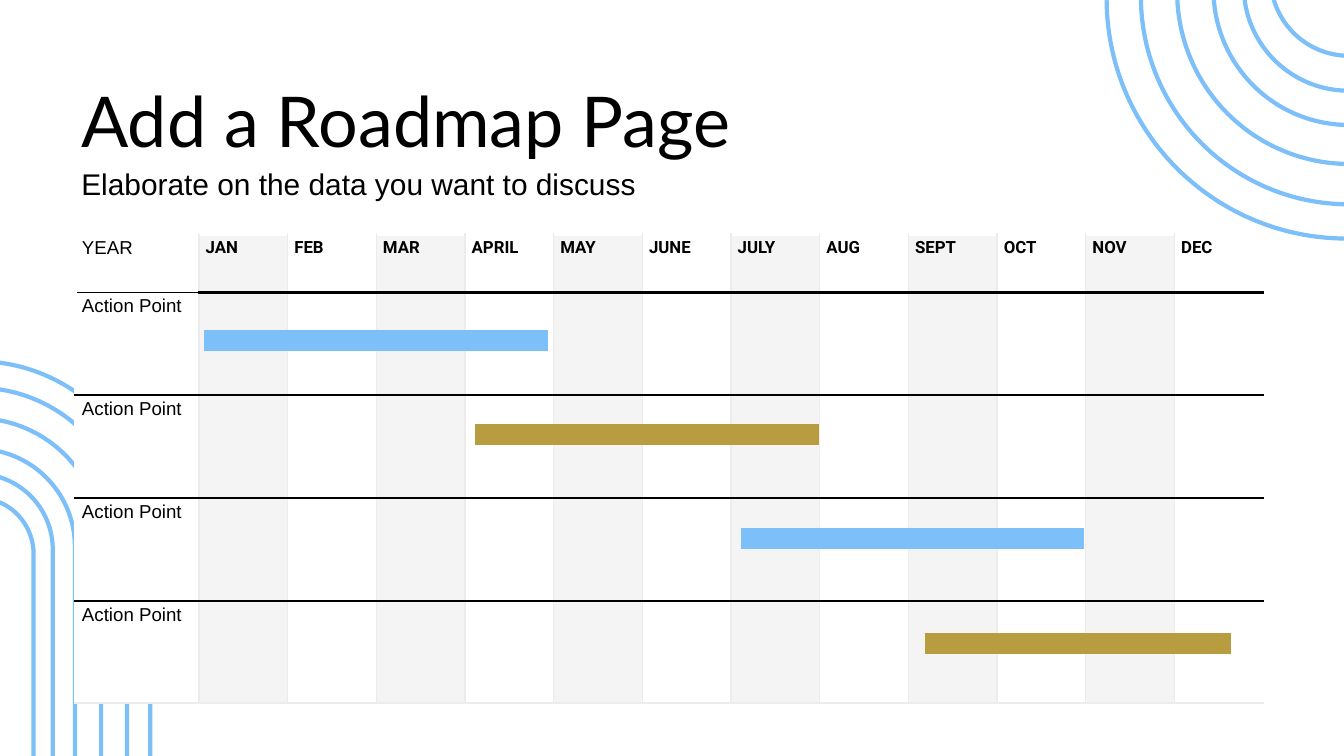
from dataclasses import dataclass

from lxml import etree
from pptx import Presentation
from pptx.dml.color import RGBColor
from pptx.enum.shapes import MSO_CONNECTOR, MSO_SHAPE
from pptx.enum.text import MSO_ANCHOR, MSO_AUTO_SIZE, PP_ALIGN
from pptx.oxml.ns import qn
from pptx.util import Inches, Pt

ARCH = MSO_SHAPE.ROUND_2_SAME_RECTANGLE
STRAIGHT = MSO_CONNECTOR.STRAIGHT
TOP = MSO_ANCHOR.TOP
LEFT = PP_ALIGN.LEFT
GROW = MSO_AUTO_SIZE.SHAPE_TO_FIT_TEXT

BLACK = RGBColor(0x00, 0x00, 0x00)
WHITE = RGBColor(0xFF, 0xFF, 0xFF)
BLUE = RGBColor(0x7D, 0xBF, 0xF8)
GOLD = RGBColor(0xB8, 0x9D, 0x40)
STRIPE = RGBColor(0xF4, 0xF4, 0xF4)
GRID = RGBColor(0xED, 0xEC, 0xED)

MONTHS = ["JAN", "FEB", "MAR", "APRIL", "MAY", "JUNE",
          "JULY", "AUG", "SEPT", "OCT", "NOV", "DEC"]
ROW_HEIGHTS = [0.86, 1.53, 1.53, 1.53, 1.52]
LABEL_WIDTH, MONTH_WIDTH = 1.84, 1.32
LAST_ROW, LAST_COLUMN = len(ROW_HEIGHTS) - 1, len(MONTHS)


@dataclass(frozen=True)
class Arch:
    left: float
    top: float
    width: float
    height: float
    rotation: float = 0


@dataclass(frozen=True)
class Bar:
    start: float
    end: float
    middle: float
    color: RGBColor


@dataclass(frozen=True)
class Border:
    color: RGBColor
    points: float


@dataclass(frozen=True)
class TextStyle:
    font: str
    size: float
    bold: bool = False


TITLE = TextStyle("Lato", 75)
SUBTITLE = TextStyle("Arial", 32)
LABEL = TextStyle("Arial", 20)
MONTH = TextStyle("Roboto", 18, True)

LEFT_CENTER_X, LEFT_CENTER_Y = -0.34, 9.57
LEFT_SIZES = [(5.15, 8.39), (4.46, 7.6), (3.69, 6.69),
              (2.91, 5.78), (2.25, 5.04), (1.68, 4.33)]
LEFT_ARCHES = [
    Arch(LEFT_CENTER_X - width / 2, LEFT_CENTER_Y - height / 2, width, height)
    for width, height in LEFT_SIZES
]
TILT = 179.8
RIGHT_ARCHES = [
    Arch(16.46, -8.06, 7.14, 11.61, TILT),
    Arch(16.97, -7.49, 6.18, 10.53, TILT),
    Arch(17.51, -6.82, 5.12, 9.26, TILT),
    Arch(18.05, -6.15, 4.03, 8.01, TILT),
    Arch(18.5, -5.63, 3.12, 6.98, TILT),
    Arch(18.9, -5.17, 2.33, 6, TILT),
]
BARS = [
    Bar(3.03, 8.15, 5.06, BLUE),
    Bar(7.07, 12.19, 6.46, GOLD),
    Bar(11.02, 16.13, 8.01, BLUE),
    Bar(13.76, 18.32, 9.57, GOLD),
]


def draw_arch(page, arch: Arch) -> None:
    shape = page.shapes.add_shape(ARCH, Inches(arch.left), Inches(arch.top),
                                  Inches(arch.width), Inches(arch.height))
    shape.adjustments[0] = 0.5
    shape.rotation = arch.rotation
    shape.shadow.inherit = False
    shape.fill.background()
    shape.line.color.rgb = BLUE
    shape.line.width = Pt(4.5)


def draw_bar(page, bar: Bar) -> None:
    line = page.shapes.add_connector(STRAIGHT, Inches(bar.start), Inches(bar.middle),
                                     Inches(bar.end), Inches(bar.middle))
    line.line.color.rgb = bar.color
    line.line.width = Pt(22.5)
    etree.SubElement(line._element.spPr, qn("a:effectLst"))


def add_span(para, text: str, style: TextStyle) -> None:
    span = para.add_run()
    span.text = text
    span.font.name = style.font
    span.font.size = Pt(style.size)
    span.font.bold = style.bold
    span.font.color.rgb = BLACK


def write_heading(box, place: tuple, text: str, style: TextStyle, spacing: float) -> None:
    box.left, box.top, box.width, box.height = map(Inches, place)
    frame = box.text_frame
    frame.word_wrap = True
    frame.auto_size = GROW
    frame.vertical_anchor = TOP
    frame.margin_left = frame.margin_top = 0
    frame.margin_right = frame.margin_bottom = 0
    para = frame.paragraphs[0]
    para.alignment = LEFT
    para.line_spacing = spacing
    add_span(para, text, style)


def horizontal_border(edge: int, column: int) -> Border:
    if edge == 0:
        return Border(WHITE, 1.5 if column == 0 else 3.03)
    if edge == 1:
        return Border(BLACK, 1.5 if column == 0 else 3.03)
    if edge > LAST_ROW:
        return Border(GRID, 1.52)
    return Border(BLACK, 2.25)


def vertical_border(edge: int, row: int) -> Border:
    if edge == 0:
        return Border(WHITE, 1.5 if row == 0 else 3.03)
    if edge > LAST_COLUMN:
        return Border(WHITE, 3.03)
    return Border(GRID, 1.5)


def set_border(cell, tag: str, border: Border) -> None:
    properties = cell._tc.get_or_add_tcPr()
    line = etree.SubElement(properties, qn(tag), w=str(Pt(border.points)))
    fill = etree.SubElement(line, qn("a:solidFill"))
    etree.SubElement(fill, qn("a:srgbClr"), val=str(border.color))


def draw_roadmap(page) -> None:
    width = LABEL_WIDTH + MONTH_WIDTH * len(MONTHS)
    table = page.shapes.add_table(len(ROW_HEIGHTS), len(MONTHS) + 1,
                                  Inches(1.12), Inches(3.49),
                                  Inches(width), Inches(sum(ROW_HEIGHTS))).table
    table.first_row = False
    table.horz_banding = False
    for index, column in enumerate(table.columns):
        column.width = Inches(MONTH_WIDTH if index else LABEL_WIDTH)
    for row, height in enumerate(ROW_HEIGHTS):
        table.rows[row].height = Inches(height)
        for column in range(len(MONTHS) + 1):
            cell = table.cell(row, column)
            set_border(cell, "a:lnL", vertical_border(column, row))
            set_border(cell, "a:lnR", vertical_border(column + 1, row))
            set_border(cell, "a:lnT", horizontal_border(row, column))
            set_border(cell, "a:lnB", horizontal_border(row + 1, column))
            cell.fill.solid()
            cell.fill.fore_color.rgb = STRIPE if column % 2 else WHITE
            para = cell.text_frame.paragraphs[0]
            if column == 0:
                add_span(para, "Action Point" if row else "YEAR", LABEL)
            elif row == 0:
                add_span(para, MONTHS[column - 1], MONTH)


def main() -> None:
    deck = Presentation()
    deck.slide_width, deck.slide_height = Inches(20), Inches(11.25)
    page = deck.slides.add_slide(deck.slide_layouts[5])
    for arch in LEFT_ARCHES:
        draw_arch(page, arch)
    draw_roadmap(page)
    for bar in BARS:
        draw_bar(page, bar)
    write_heading(page.shapes.title, (1.21, 0.91, 11.76, 1.26),
                  "Add a Roadmap Page", TITLE, 1.2)
    subtitle = page.shapes.add_textbox(0, 0, 0, 0)
    write_heading(subtitle, (1.21, 2.31, 10.61, 0.57),
                  "Elaborate on the data you want to discuss", SUBTITLE, 1.3)
    for arch in RIGHT_ARCHES:
        draw_arch(page, arch)
    deck.save("out.pptx")


if __name__ == "__main__":
    main()
